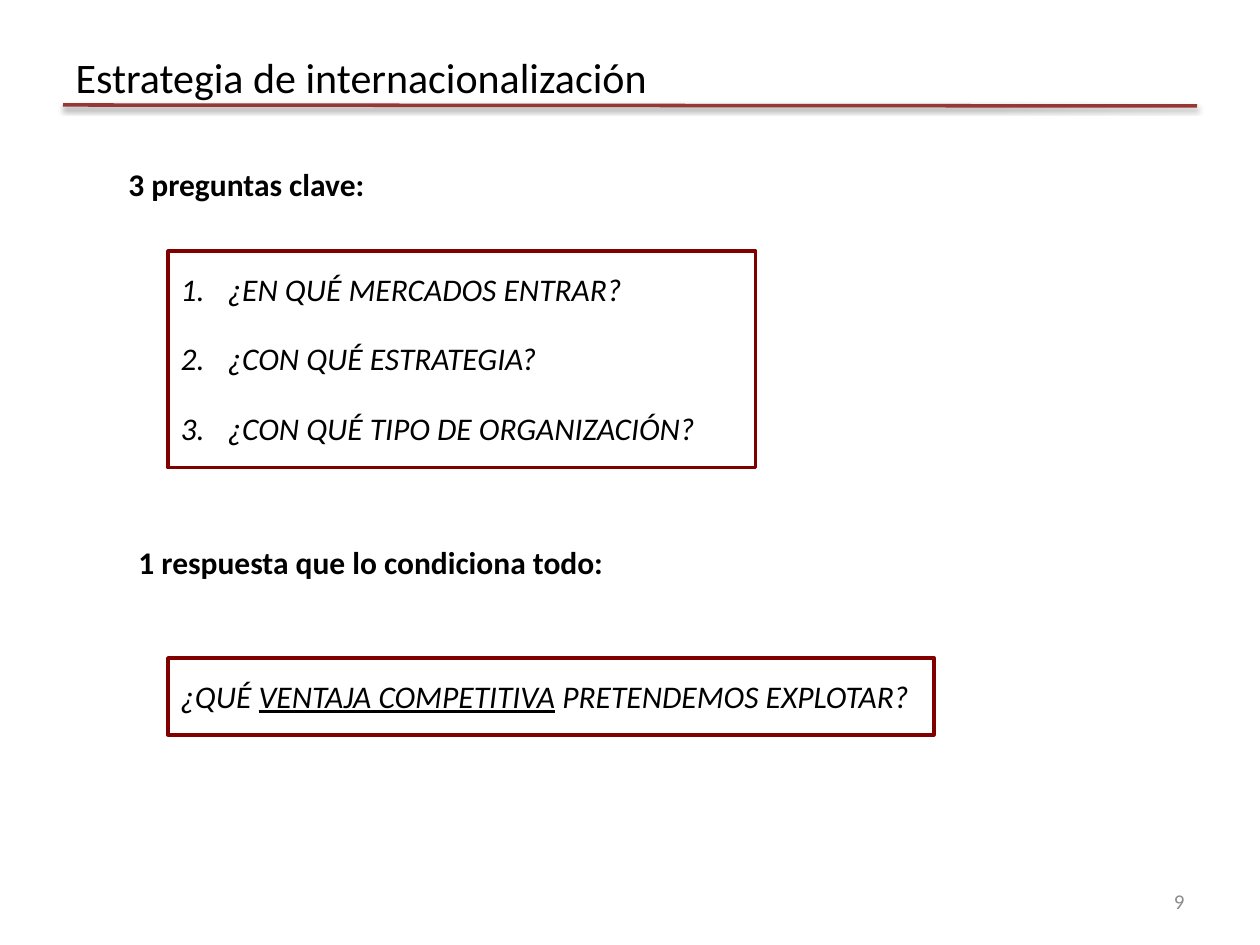
from dataclasses import dataclass

from lxml import etree
from pptx import Presentation
from pptx.dml.color import RGBColor
from pptx.enum.shapes import MSO_CONNECTOR as Connector, MSO_SHAPE as Preset
from pptx.enum.text import MSO_ANCHOR as Anchor, MSO_AUTO_SIZE as AutoSize, PP_ALIGN as Align
from pptx.oxml import parse_xml
from pptx.oxml.ns import nsdecls, qn
from pptx.util import Emu, Pt

PX_PER_INCH = 126


@dataclass(frozen=True)
class Theme:
    font: str = "Calibri"
    ink: str = "000000"
    muted: str = "8C8C8C"
    rule: str = "953735"
    frame: str = "800000"
    title_size: int = 24
    body_size: int = 18
    number_size: int = 12


@dataclass(frozen=True)
class Box:
    left: int
    top: int
    width: int
    height: int


@dataclass(frozen=True)
class Label:
    text: str
    box: Box
    size: int
    color: str
    bold: bool = False
    align: Align = Align.LEFT
    anchor: Anchor = Anchor.TOP


THEME = Theme()
LABELS = [
    Label("3 preguntas clave:", Box(116, 159, 294, 51), THEME.body_size, THEME.ink, bold=True),
    Label("1 respuesta que lo condiciona todo:", Box(126, 537, 777, 51),
          THEME.body_size, THEME.ink, bold=True),
    Label("9", Box(903, 876, 294, 50), THEME.number_size, THEME.muted,
          align=Align.RIGHT, anchor=Anchor.MIDDLE),
]
QUESTIONS = [
    "¿EN QUÉ MERCADOS ENTRAR?",
    "¿CON QUÉ ESTRATEGIA?",
    "¿CON QUÉ TIPO DE ORGANIZACIÓN?",
]


def px(value: int) -> Emu:
    return Emu(round(value * 914400 / PX_PER_INCH))


def place(shape, box: Box) -> None:
    shape.left, shape.top = px(box.left), px(box.top)
    shape.width, shape.height = px(box.width), px(box.height)


def style_run(run, size: int, color: str = THEME.ink, bold: bool = False,
              italic: bool = False, underline: bool = False) -> None:
    font = run.font
    font.name, font.size = THEME.font, Pt(size)
    font.color.rgb = RGBColor.from_string(color)
    font.bold, font.italic, font.underline = bold, italic, underline


def set_frame(shape, line_width: float) -> None:
    """Give a shape the dark red outline and the roomy inner margins."""
    shape.fill.background()
    shape.line.color.rgb = RGBColor.from_string(THEME.frame)
    shape.line.width = Pt(line_width)
    text_frame = shape.text_frame
    text_frame.word_wrap = True
    text_frame.auto_size = AutoSize.NONE
    text_frame.vertical_anchor = Anchor.TOP
    text_frame.margin_top = text_frame.margin_bottom = px(19)


def add_rule(slide) -> None:
    rule = slide.shapes.add_connector(Connector.STRAIGHT, px(63), px(105), px(1197), px(106))
    rule.line.color.rgb = RGBColor.from_string(THEME.rule)
    rule.line.width = Pt(2)
    rule.element.spPr.append(parse_xml(
        f'<a:effectLst {nsdecls("a")}>'
        f'<a:outerShdw blurRad="{Pt(3.1)}" dist="{Pt(1.6)}" dir="5400000" rotWithShape="0">'
        '<a:srgbClr val="000000"><a:alpha val="38000"/></a:srgbClr>'
        '</a:outerShdw></a:effectLst>'))
    slide.shapes.element.insert(2, rule.element)  # behind the title


def set_title(slide, text: str) -> None:
    title = slide.shapes.title
    place(title, Box(63, 38, 1134, 78))
    text_frame = title.text_frame
    text_frame.text = text
    text_frame.auto_size = AutoSize.NONE
    text_frame.vertical_anchor = Anchor.MIDDLE
    paragraph = text_frame.paragraphs[0]
    paragraph.alignment = Align.LEFT
    style_run(paragraph.runs[0], THEME.title_size)


def set_questions(slide, questions: list[str]) -> None:
    body = slide.placeholders[1]
    place(body, Box(168, 251, 588, 217))
    body.text_frame.text = "\n".join(questions)
    set_frame(body, 1.75)
    for paragraph in body.text_frame.paragraphs:
        paragraph.space_before, paragraph.space_after = Pt(0), Pt(18)
        style_run(paragraph.runs[0], THEME.body_size, italic=True)
        properties = paragraph._p.get_or_add_pPr()
        properties.set("marL", str(px(47)))
        properties.set("indent", str(-px(47)))
        etree.SubElement(properties, qn("a:buFont"), typeface=THEME.font)
        etree.SubElement(properties, qn("a:buAutoNum"), type="arabicPeriod")


def add_label(slide, label: Label) -> None:
    shape = slide.shapes.add_textbox(0, 0, 0, 0)
    place(shape, label.box)
    text_frame = shape.text_frame
    text_frame.word_wrap = True
    text_frame.vertical_anchor = label.anchor
    text_frame.text = label.text
    paragraph = text_frame.paragraphs[0]
    paragraph.alignment = label.align
    style_run(paragraph.runs[0], label.size, label.color, bold=label.bold)


def add_answer(slide) -> None:
    answer = slide.shapes.add_shape(Preset.RECTANGLE, 0, 0, 0, 0)
    place(answer, Box(168, 658, 766, 77))
    answer.shadow.inherit = False
    set_frame(answer, 2)
    paragraph = answer.text_frame.paragraphs[0]
    paragraph.alignment = Align.LEFT
    for text, italic, underline in [
        ("¿QUÉ ", True, False),
        ("VENTAJA COMPETITIVA", True, True),
        (" ", False, False),
        ("PRETENDEMOS EXPLOTAR?", True, False),
    ]:
        run = paragraph.add_run()
        run.text = text
        style_run(run, THEME.body_size, italic=italic, underline=underline)


def main() -> None:
    presentation = Presentation()
    presentation.slide_width, presentation.slide_height = px(1260), px(945)
    slide = presentation.slides.add_slide(presentation.slide_layouts[1])
    add_rule(slide)
    set_title(slide, "Estrategia de internacionalización")
    set_questions(slide, QUESTIONS)
    for label in LABELS:
        add_label(slide, label)
    add_answer(slide)
    presentation.save("out.pptx")


if __name__ == "__main__":
    main()
